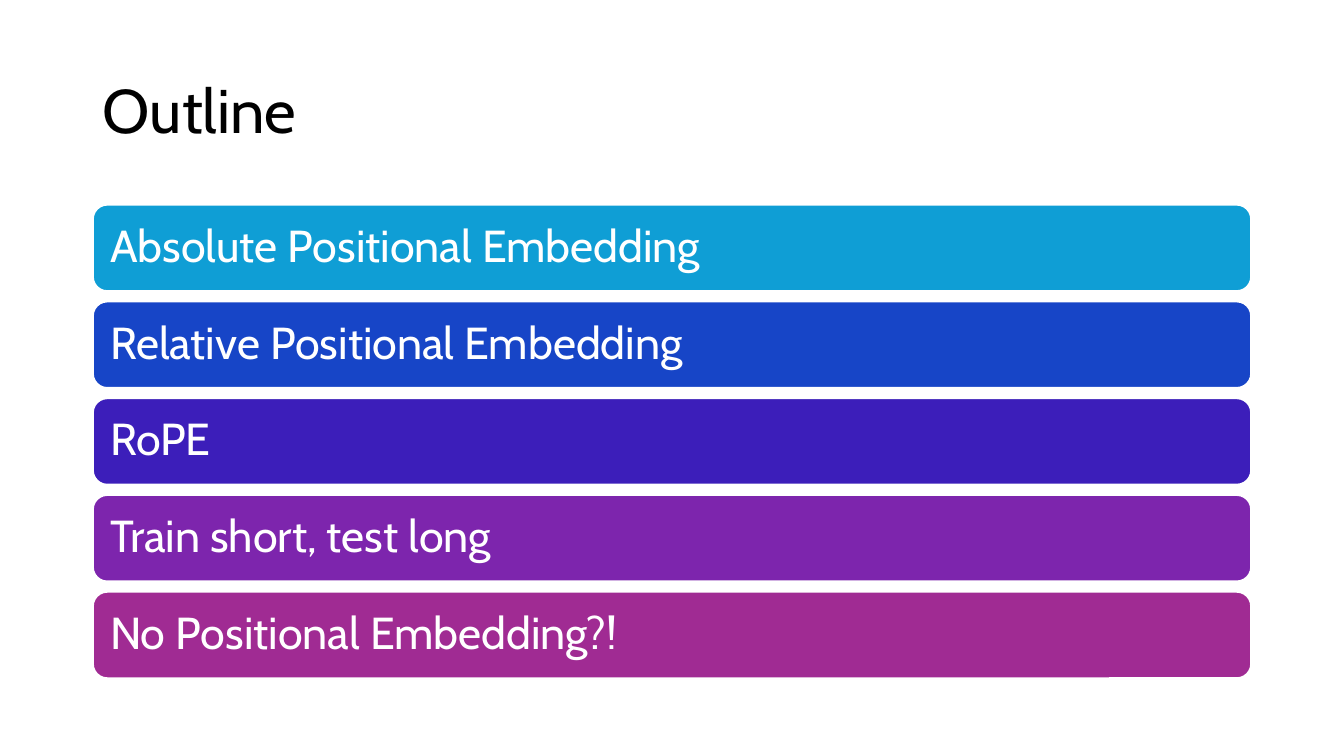
from dataclasses import dataclass

from pptx import Presentation
from pptx.dml.color import RGBColor
from pptx.enum.shapes import MSO_SHAPE
from pptx.enum.text import MSO_ANCHOR, PP_ALIGN
from pptx.util import Inches, Pt

TITLE = "Outline"
TOPICS = [
    ("Absolute Positional Embedding", "0F9ED5"),
    ("Relative Positional Embedding", "1745C7"),
    ("RoPE", "3C1EBA"),
    ("Train short, test long", "7D25AD"),
    ("No Positional Embedding?!", "A02B93"),
]


@dataclass(frozen=True)
class Theme:
    font: str = "Cabin"
    title_size: int = 44
    topic_size: int = 32
    dark: str = "000000"
    light: str = "FFFFFF"


THEME = Theme()
WIDTH, HEIGHT = 13.33, 7.5
MARGIN = 0.92
CONTENT_WIDTH = WIDTH - 2 * MARGIN
TITLE_TOP, TITLE_HEIGHT = 0.4, 1.45
BARS_TOP, BAR_HEIGHT, BAR_PITCH = 2.03, 0.86, 0.96
BAR_INSET = 0.13


def write(shape, text, size, color):
    tf = shape.text_frame
    tf.text = text
    tf.word_wrap = True
    tf.vertical_anchor = MSO_ANCHOR.MIDDLE
    p = tf.paragraphs[0]
    p.alignment = PP_ALIGN.LEFT
    p.line_spacing = 0.9
    p.font.name = THEME.font
    p.font.size = Pt(size)
    p.font.color.rgb = RGBColor.from_string(color)
    return tf


def place(shape, top, height):
    """Span the content width at the given height on the slide."""
    shape.left, shape.width = Inches(MARGIN), Inches(CONTENT_WIDTH)
    shape.top, shape.height = Inches(top), Inches(height)


def add_topic(s, row, text, fill):
    bar = s.shapes.add_shape(MSO_SHAPE.ROUNDED_RECTANGLE, 0, 0, 0, 0)
    place(bar, BARS_TOP + row * BAR_PITCH, BAR_HEIGHT)
    bar.shadow.inherit = False
    bar.fill.solid()
    bar.fill.fore_color.rgb = RGBColor.from_string(fill)
    bar.line.color.rgb = RGBColor.from_string(THEME.light)
    bar.line.width = Pt(1.5)
    tf = write(bar, text, THEME.topic_size, THEME.light)
    tf.margin_left = tf.margin_right = Inches(BAR_INSET)
    tf.margin_top = tf.margin_bottom = Inches(BAR_INSET)


def main():
    prs = Presentation()
    prs.slide_width, prs.slide_height = Inches(WIDTH), Inches(HEIGHT)
    s = prs.slides.add_slide(prs.slide_layouts.get_by_name("Title Only"))
    place(s.shapes.title, TITLE_TOP, TITLE_HEIGHT)
    write(s.shapes.title, TITLE, THEME.title_size, THEME.dark)
    for row, (text, fill) in enumerate(TOPICS):
        add_topic(s, row, text, fill)
    prs.save("out.pptx")


if __name__ == "__main__":
    main()
